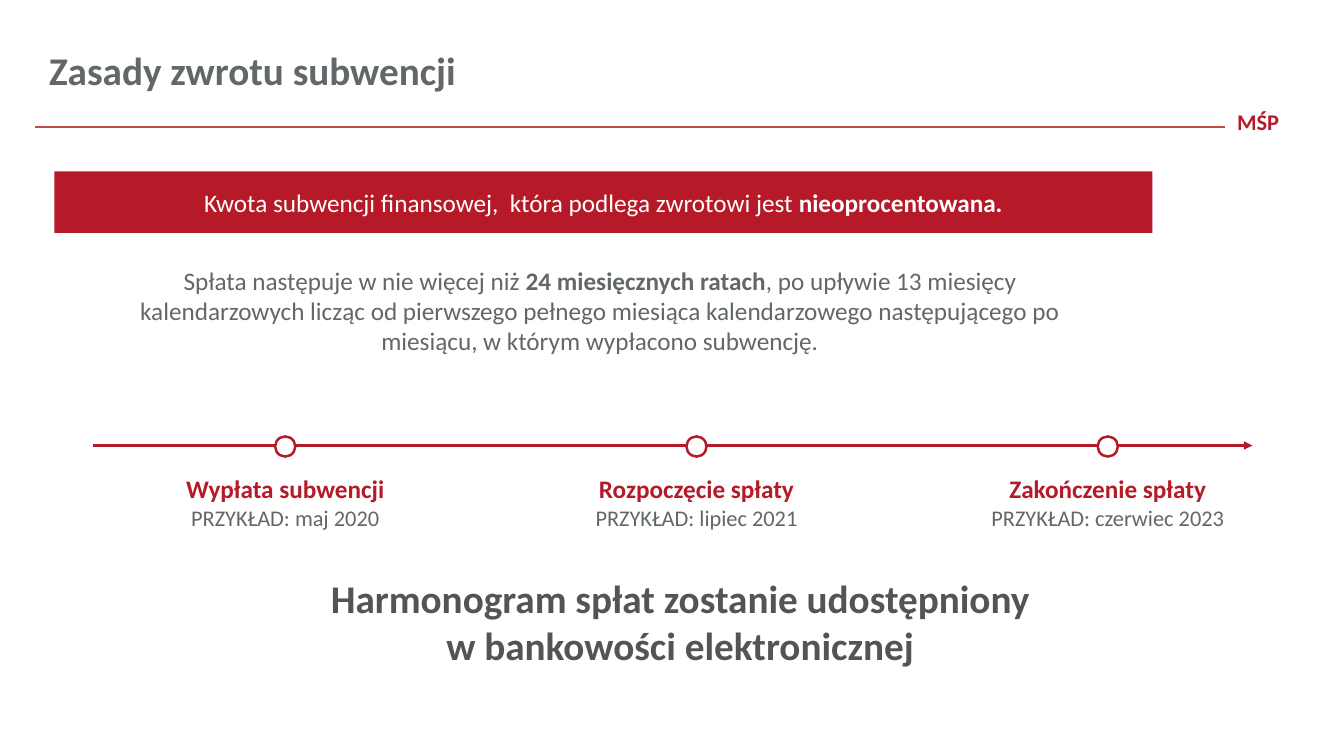
from lxml import etree
from pptx import Presentation
from pptx.dml.color import RGBColor
from pptx.enum.shapes import MSO_CONNECTOR, MSO_SHAPE
from pptx.enum.text import MSO_ANCHOR, PP_ALIGN
from pptx.oxml.ns import qn
from pptx.util import Inches, Pt

LEFT, CENTER = PP_ALIGN.LEFT, PP_ALIGN.CENTER
TOP, MIDDLE = MSO_ANCHOR.TOP, MSO_ANCHOR.MIDDLE
RECTANGLE, OVAL = MSO_SHAPE.RECTANGLE, MSO_SHAPE.OVAL
STRAIGHT = MSO_CONNECTOR.STRAIGHT

RED, RULE_RED, WHITE = "B61928", "C34B45", "FFFFFF"
GRAY, DARK_GRAY = "626769", "545454"
COLUMNS, ROWS = 40, 30


def color(value):
    return RGBColor.from_string(value)


class SlideBuilder:
    """Places styled elements on a grid of 40 columns by 30 rows."""

    font = "Calibri"

    def __init__(self, deck):
        self.column = deck.slide_width / COLUMNS
        self.row = deck.slide_height / ROWS
        self.slide = deck.slides.add_slide(deck.slide_layouts[6])

    def place(self, x, y):
        return round(x * self.column), round(y * self.row)

    def line(self, x1, x2, y, stroke, width, arrow=False):
        connector = self.slide.shapes.add_connector(
            STRAIGHT, *self.place(x1, y), *self.place(x2, y))
        connector.line.color.rgb = color(stroke)
        connector.line.width = Pt(width)
        properties = connector._element.spPr
        if arrow:
            outline = properties.find(qn("a:ln"))
            etree.SubElement(outline, qn("a:tailEnd"), type="triangle")
        etree.SubElement(properties, qn("a:effectLst"))

    def shape(self, kind, x, y, width, height, fill, stroke=None):
        shape = self.slide.shapes.add_shape(
            kind, *self.place(x, y), *self.place(width, height))
        shape.shadow.inherit = False
        shape.fill.solid()
        shape.fill.fore_color.rgb = color(fill)
        if stroke:
            shape.line.color.rgb = color(stroke)
            shape.line.width = Pt(1.75)
        else:
            shape.line.fill.background()
        return shape

    def text(self, x, y, width, height, *paragraphs, align=LEFT, inset=True):
        box = self.slide.shapes.add_textbox(
            *self.place(x, y), *self.place(width, height))
        frame = box.text_frame
        self.fill_text(frame, paragraphs, align)
        if not inset:
            frame.margin_left = frame.margin_right = 0
            frame.margin_top = frame.margin_bottom = 0

    def fill_text(self, frame, paragraphs, align, anchor=TOP):
        """Each paragraph is (words, size, colour, bold); ** marks bold spans."""
        frame.word_wrap = True
        frame.vertical_anchor = anchor
        for index, (words, size, ink, bold) in enumerate(paragraphs):
            para = frame.add_paragraph() if index else frame.paragraphs[0]
            para.alignment = align
            para.font.name = self.font
            para.font.size = Pt(size)
            para.font.color.rgb = color(ink)
            para.font.bold = bold
            for number, part in enumerate(words.split("**")):
                if part:
                    span = para.add_run()
                    span.text = part
                    if number % 2:
                        span.font.bold = True


def main():
    deck = Presentation()
    deck.slide_width, deck.slide_height = Inches(13.33), Inches(7.5)
    page = SlideBuilder(deck)

    # Header
    page.line(1.05, 36.46, 5.04, RULE_RED, 2)
    page.text(36.52, 4.08, 2.13, 1.48, ("MŚP", 16, RED, True))
    page.text(1.17, 1.64, 32.83, 2.28,
              ("Zasady zwrotu subwencji", 28, GRAY, True))

    # Key message and repayment rule
    banner = page.shape(RECTANGLE, 1.62, 6.8, 32.68, 2.44, RED)
    message = ("Kwota subwencji finansowej,  która podlega zwrotowi jest "
               "**nieoprocentowana.**")
    page.fill_text(banner.text_frame, [(message, 18, WHITE, False)],
                   CENTER, MIDDLE)
    rule = ("Spłata następuje w nie więcej niż **24 miesięcznych ratach**, "
            "po upływie 13 miesięcy kalendarzowych licząc od pierwszego "
            "pełnego miesiąca kalendarzowego następującego po miesiącu, "
            "w którym wypłacono subwencję.")
    page.text(3.06, 10.52, 29.59, 3.64, (rule, 18, GRAY, False),
              align=CENTER, inset=False)

    # Timeline
    page.line(2.76, 37.27, 17.68, RED, 1.75, arrow=True)
    milestones = [
        ("Wypłata subwencji", "maj 2020"),
        ("Rozpoczęcie spłaty", "lipiec 2021"),
        ("Zakończenie spłaty", "czerwiec 2023"),
    ]
    first, step, label_width = 8.49, 12.24, 8.2
    for index, (stage, date) in enumerate(milestones):
        middle = first + index * step
        page.shape(OVAL, middle - 0.3, 17.32, 0.6, 0.8, WHITE, RED)
        page.text(middle - label_width / 2, 18.6, label_width, 2.68,
                  (stage, 18, RED, True),
                  (f"PRZYKŁAD: {date}", 16, GRAY, False), align=CENTER)

    # Closing note
    page.text(9.24, 22.6, 22, 4.16,
              ("Harmonogram spłat zostanie udostępniony "
               "w bankowości elektronicznej", 28, DARK_GRAY, True),
              align=CENTER)

    deck.save("out.pptx")


if __name__ == "__main__":
    main()
